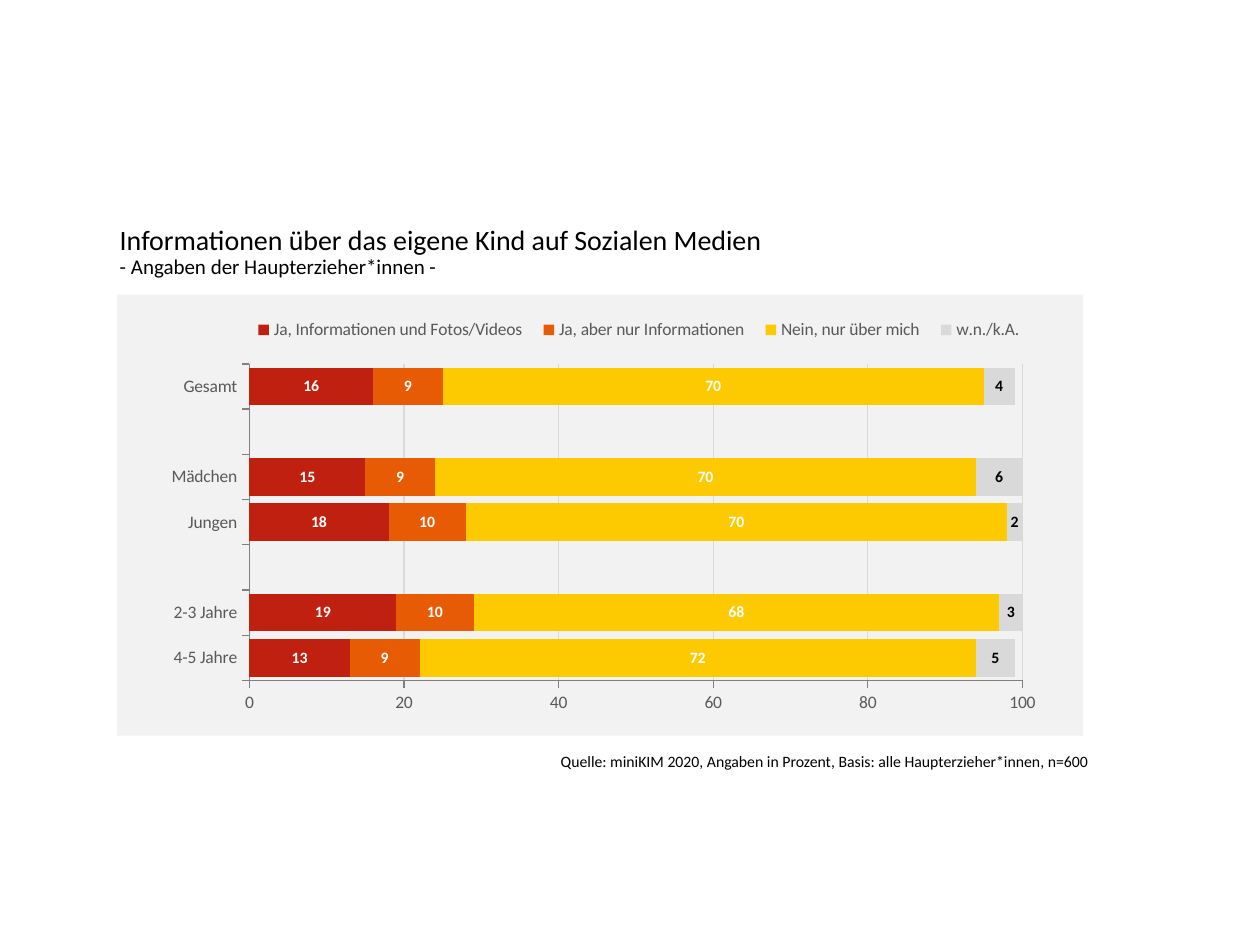
import pptx
import pptx.util
import pptx.chart.data
import pptx.dml.color
import pptx.enum.chart
import pptx.enum.text
import pptx.oxml
import pptx.oxml.ns

Cm = pptx.util.Cm
Pt = pptx.util.Pt
qn = pptx.oxml.ns.qn
NS = pptx.oxml.ns.nsdecls("c", "a")

CATS = ["4-5 Jahre", "2-3 Jahre", "", "Jungen", "Mädchen", "", "Gesamt"]
ROWS = [
    ("Ja, Informationen und Fotos/Videos", [13, 19, None, 18, 15, None, 16], "C02010", "FFFFFF"),
    ("Ja, aber nur Informationen", [9, 10, None, 10, 9, None, 9], "E65B03", "FFFFFF"),
    ("Nein, nur über mich", [72, 68, None, 70, 70, None, 70], "FDC900", "FFFFFF"),
    ("w.n./k.A.", [5, 3, None, 2, 6, None, 4], "D9D9D9", "000000"),
]


def color(code):
    return pptx.dml.color.RGBColor.from_string(code)


class Deck:
    face = "Calibri"
    ink = "000000"
    gray = "595959"

    def __init__(self, wide, high):
        self.prs = pptx.Presentation()
        self.prs.slide_width, self.prs.slide_height = Cm(wide), Cm(high)
        self.slide = self.prs.slides.add_slide(self.prs.slide_layouts[0])

    def font(self, font, size, code, bold=False):
        font.name, font.size, font.bold = self.face, Pt(size), bold
        font.color.rgb = color(code)

    def line(self, form, code):
        form.line.color.rgb = color(code)
        form.line.width = Pt(0.75)

    def text(self, hold, box, text, sizes, align, anchor):
        hold.left, hold.top, hold.width, hold.height = map(Cm, box)
        frame = hold.text_frame
        frame.text = text
        frame.word_wrap = True
        frame.auto_size = pptx.enum.text.MSO_AUTO_SIZE.NONE
        frame.vertical_anchor = anchor
        para = frame.paragraphs[0]
        para.alignment, para.line_spacing, para.space_before = align, 0.9, Pt(0)
        for run, size in zip(para.runs, sizes):
            self.font(run.font, size, self.ink)

    def place(self, node, index, inner, box):
        for old in node.findall(qn("c:layout")):
            node.remove(old)
        target = '<c:layoutTarget val="inner"/>' if inner else ""
        modes = '<c:xMode val="edge"/><c:yMode val="edge"/>'
        sizes = "".join(f'<c:{key} val="{val}"/>' for key, val in zip("xywh", box))
        node.insert(index, pptx.oxml.parse_xml(
            f"<c:layout {NS}><c:manualLayout>{target}{modes}{sizes}</c:manualLayout></c:layout>"))

    def axis(self, axis):
        axis.major_tick_mark = pptx.enum.chart.XL_TICK_MARK.OUTSIDE
        axis.minor_tick_mark = pptx.enum.chart.XL_TICK_MARK.NONE
        self.font(axis.tick_labels.font, 10, self.gray)
        self.line(axis.format, "808080")

    def chart(self, box, cats, rows, fill):
        data = pptx.chart.data.CategoryChartData(number_format="0")
        data.categories = cats
        for name, vals, _, _ in rows:
            data.add_series(name, vals)
        kind = pptx.enum.chart.XL_CHART_TYPE.BAR_STACKED
        chart = self.slide.shapes.add_chart(kind, *map(Cm, box), data).chart
        chart.has_title = False
        self.font(chart.font, 10, self.ink)
        chart.element.find(qn("c:chart")).addnext(pptx.oxml.parse_xml(
            f'<c:spPr {NS}><a:solidFill><a:srgbClr val="{fill}"/></a:solidFill>'
            "<a:ln><a:noFill/></a:ln></c:spPr>"))

        self.axis(chart.category_axis)
        scale = chart.value_axis
        self.axis(scale)
        scale.minimum_scale, scale.maximum_scale, scale.major_unit = 0, 100, 20
        scale.has_major_gridlines = True
        self.line(scale.major_gridlines.format, "D9D9D9")
        scale.tick_labels.number_format = "0"
        scale.tick_labels.number_format_is_linked = False

        plot = chart.plots[0]
        plot.gap_width, plot.overlap, plot.vary_by_categories = 20, 100, False
        for bar, (_, _, code, ink) in zip(plot.series, rows):
            bar.format.fill.solid()
            bar.format.fill.fore_color.rgb = color(code)
            tags = bar.data_labels
            tags.show_value = True
            tags.position = pptx.enum.chart.XL_LABEL_POSITION.CENTER
            tags.number_format = "0"
            tags.number_format_is_linked = False
            self.font(tags.font, 9, ink, True)

        chart.has_legend = True
        chart.legend.position = pptx.enum.chart.XL_LEGEND_POSITION.TOP
        chart.legend.include_in_layout = False
        self.font(chart.legend.font, 10, self.gray)
        root = chart.element.find(qn("c:chart"))
        self.place(root.find(qn("c:plotArea")), 0, True, (0.137, 0.157, 0.8, 0.718))
        self.place(root.find(qn("c:legend")), 1, False, (0.13, 0.05, 0.82, 0.06))


def main():
    deck = Deck(25.4, 19.05)
    title, source = deck.slide.placeholders
    align = pptx.enum.text.PP_ALIGN
    anchor = pptx.enum.text.MSO_ANCHOR
    deck.text(title, (2.16, 4.17, 19.48, 1.85),
              "Informationen über das eigene Kind auf Sozialen Medien\v"
              "- Angaben der Haupterzieher*innen -",
              (16, 12), align.LEFT, anchor.MIDDLE)
    deck.text(source, (3.61, 15.06, 18.57, 0.66),
              "Quelle: miniKIM 2020, Angaben in Prozent, Basis: alle Haupterzieher*innen, n=600",
              (9,), align.RIGHT, anchor.TOP)
    deck.chart((2.36, 5.94, 19.48, 8.89), CATS, ROWS, "F2F2F2")
    deck.prs.save("out.pptx")


if __name__ == "__main__":
    main()
